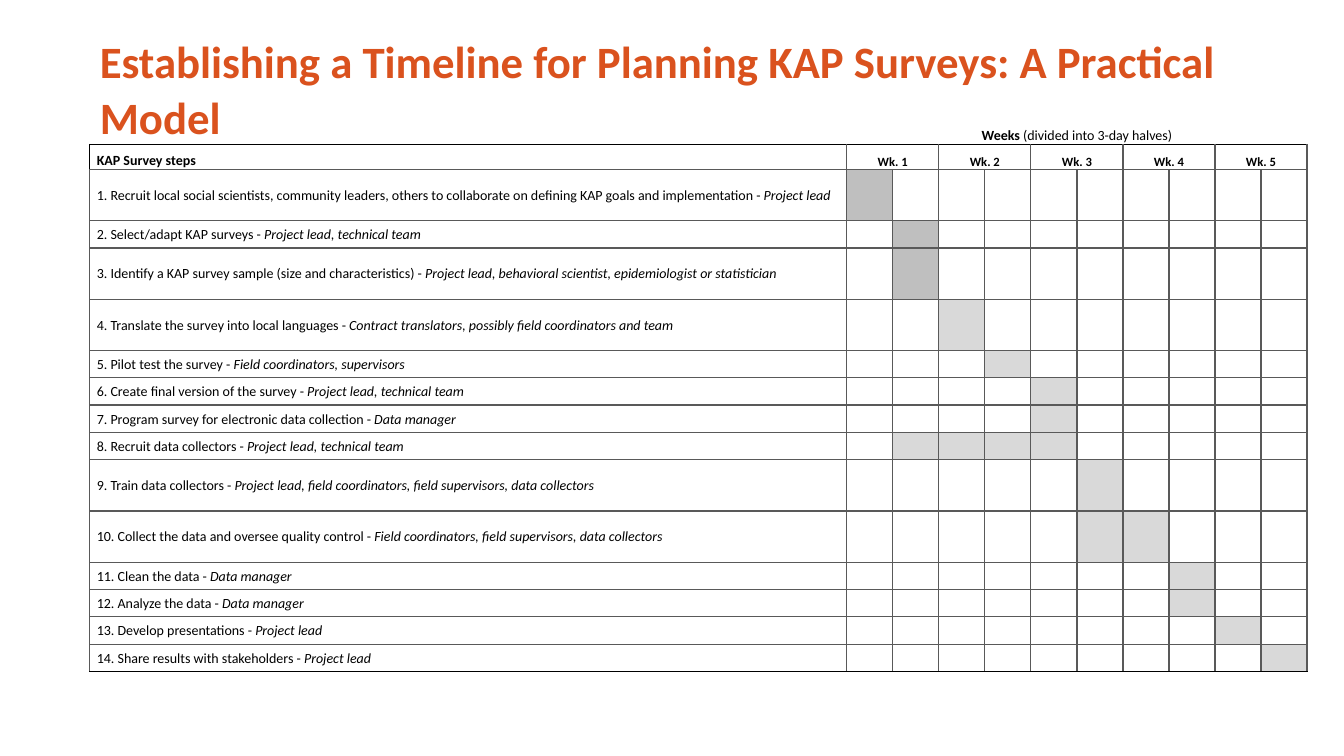
"""Build the KAP survey timeline slide."""
import pptx
import pptx.util
import pptx.dml.color
import pptx.enum.text
import pptx.oxml
import pptx.oxml.ns
from pptx.util import Cm

TITLE = "Establishing a Timeline for Planning KAP Surveys: A Practical Model"
HEAD = "KAP Survey steps"
SPAN = [("Weeks", True, False), (" (divided into 3-day halves)", False, False)]
WEEKS = 5
TALL, SHORT = 1.29, 0.69
DARK, PALE = "BFBFBF", "D9D9D9"
# step, who, first half-week, last half-week, row height, bar colour
STEPS = [
    ("Recruit local social scientists, community leaders, others to collaborate "
     "on defining KAP goals and implementation", "Project lead", 1, 1, TALL, DARK),
    ("Select/adapt KAP surveys", "Project lead, technical team", 2, 2, SHORT, DARK),
    ("Identify a KAP survey sample (size and characteristics)",
     "Project lead, behavioral scientist, epidemiologist or statistician", 2, 2, TALL, DARK),
    ("Translate the survey into local languages",
     "Contract translators, possibly field coordinators and team", 3, 3, TALL, PALE),
    ("Pilot test the survey", "Field coordinators, supervisors", 4, 4, SHORT, PALE),
    ("Create final version of the survey", "Project lead, technical team", 5, 5, SHORT, PALE),
    ("Program survey for electronic data collection", "Data manager", 5, 5, SHORT, PALE),
    ("Recruit data collectors", "Project lead, technical team", 2, 5, SHORT, PALE),
    ("Train data collectors",
     "Project lead, field coordinators, field supervisors, data collectors", 6, 6, TALL, PALE),
    ("Collect the data and oversee quality control",
     "Field coordinators, field supervisors, data collectors", 6, 7, TALL, PALE),
    ("Clean the data", "Data manager", 8, 8, SHORT, PALE),
    ("Analyze the data", "Data manager", 8, 8, SHORT, PALE),
    ("Develop presentations", "Project lead", 9, 9, SHORT, PALE),
    ("Share results with stakeholders", "Project lead", 10, 10, SHORT, PALE),
]
WIDTHS = [19.08] + [1.16] * (2 * WEEKS)
HEIGHTS = [0.62, 0.63] + [step[4] for step in STEPS] + [0.56]
LAST = len(HEIGHTS) - 1
GREY, BLACK = "595959", "000000"
MID = pptx.enum.text.MSO_ANCHOR.MIDDLE
LOW = pptx.enum.text.MSO_ANCHOR.BOTTOM
LEFT = pptx.enum.text.PP_ALIGN.LEFT
CENTER = pptx.enum.text.PP_ALIGN.CENTER


def color(code):
    return pptx.dml.color.RGBColor.from_string(code)


def add_run(para, text, size, bold, slant, code):
    run = para.add_run()
    run.text = text
    font = run.font
    font.name, font.size = "Calibri", pptx.util.Pt(size)
    font.bold, font.italic = bold, slant
    font.color.rgb = color(code)


def write(cell, runs, size=10, align=LEFT, anchor=MID):
    cell.vertical_anchor = anchor
    para = cell.text_frame.paragraphs[0]
    para.alignment, para.line_spacing = align, 1.07
    for text, bold, slant in runs:
        add_run(para, text, size, bold, slant, BLACK)


def edges(row, col):
    if row == 0:
        return {"B": BLACK}
    if row == LAST:
        return {"T": BLACK}
    lines = dict.fromkeys("LRTB", GREY)
    if row == 1:
        lines["T"] = BLACK
        if col == 0:
            lines["L"] = BLACK
    if row == LAST - 1:
        lines["B"] = BLACK
    return lines


def border(cell, lines):
    props = cell._tc.get_or_add_tcPr()
    for spot, side in enumerate("LRTB"):
        paint = "<a:noFill/>"
        if side in lines:
            paint = f'<a:solidFill><a:srgbClr val="{lines[side]}"/></a:solidFill>'
        props.insert(spot, pptx.oxml.parse_xml(
            f'<a:ln{side} {pptx.oxml.ns.nsdecls("a")} w="12700">{paint}</a:ln{side}>'))


def blank(cell, row, col):
    cell.margin_left = cell.margin_right = Cm(0.18)
    cell.margin_top = cell.margin_bottom = 0
    cell.fill.background()
    if 2 <= row < LAST:
        first, last, _, shade = STEPS[row - 2][2:]
        if first <= col <= last:
            cell.fill.solid()
            cell.fill.fore_color.rgb = color(shade)
    border(cell, edges(row, col))
    cell.text_frame.paragraphs[0]._p.append(pptx.oxml.parse_xml(
        f'<a:endParaRPr {pptx.oxml.ns.nsdecls("a")} sz="1000"/>'))


def add_title(slide):
    title = slide.shapes.title
    title.left, title.top, title.width, title.height = Cm(2.26), Cm(0.76), Cm(30.66), Cm(2.9)
    frame = title.text_frame
    frame.auto_size = pptx.enum.text.MSO_AUTO_SIZE.NONE
    frame.word_wrap, frame.vertical_anchor = True, MID
    para = frame.paragraphs[0]
    para.alignment, para.line_spacing = LEFT, pptx.util.Pt(40)
    add_run(para, TITLE, 32, True, False, "DA521E")


def add_plan(slide):
    table = slide.shapes.add_table(len(HEIGHTS), len(WIDTHS), Cm(2.26), Cm(3.02),
                                   Cm(sum(WIDTHS)), Cm(sum(HEIGHTS))).table
    table.first_row = table.horz_banding = False
    for col, width in enumerate(WIDTHS):
        table.columns[col].width = Cm(width)
    for row, height in enumerate(HEIGHTS):
        table.rows[row].height = Cm(height)
        for col in range(len(WIDTHS)):
            blank(table.cell(row, col), row, col)
    table.cell(0, 1).merge(table.cell(0, 2 * WEEKS))
    table.cell(LAST, 0).merge(table.cell(LAST, 2 * WEEKS))
    write(table.cell(0, 1), SPAN, align=CENTER, anchor=LOW)
    write(table.cell(1, 0), [(HEAD, True, False)], anchor=LOW)
    for week in range(WEEKS):
        cell = table.cell(1, 2 * week + 1)
        cell.merge(table.cell(1, 2 * week + 2))
        write(cell, [(f"Wk. {week + 1}", True, False)], 9, CENTER, LOW)
    for num, (step, who, *_) in enumerate(STEPS, 1):
        write(table.cell(num + 1, 0),
              [(f"{num}. {step} - ", False, False), (who, False, True)])


def main():
    deck = pptx.Presentation()
    deck.slide_width, deck.slide_height = Cm(33.87), Cm(19.05)
    slide = deck.slides.add_slide(deck.slide_layouts[5])
    add_title(slide)
    add_plan(slide)
    deck.save("out.pptx")


if __name__ == "__main__":
    main()
